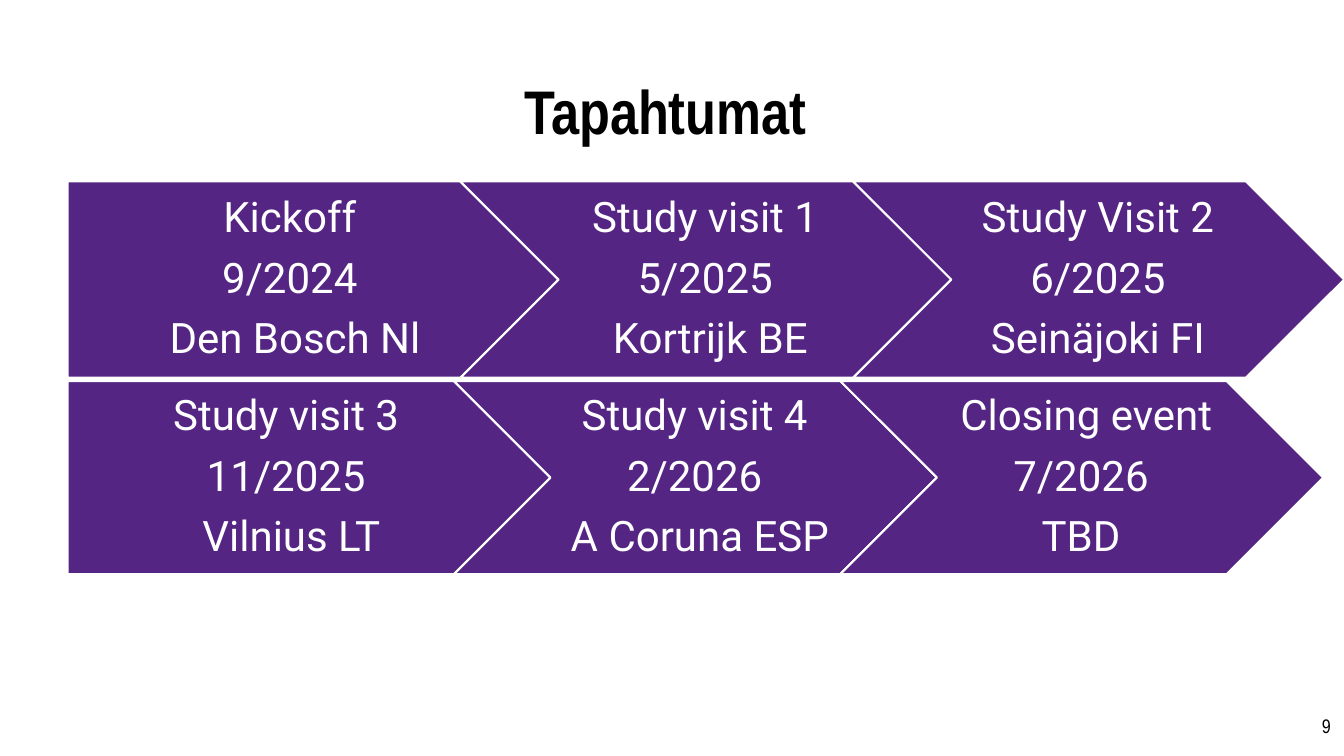
import pptx
import pptx.util
import pptx.dml.color
import pptx.enum.shapes
import pptx.enum.text

Inches, Pt = pptx.util.Inches, pptx.util.Pt
SHAPE = pptx.enum.shapes.MSO_SHAPE
ALIGN = pptx.enum.text.PP_ALIGN
MIDDLE = pptx.enum.text.MSO_ANCHOR.MIDDLE

COLORS = {
    name: pptx.dml.color.RGBColor.from_string(value)
    for name, value in {"arrow": "542583", "light": "FFFFFF", "dark": "000000"}.items()
}

LEFT = 0.67
STEP = 0.8     # share of an arrow's width from one arrow to the next
HEIGHT = 0.4   # arrow height as a share of its width

# top, arrow width, events
EVENT_ROWS = [
    (1.8, 4.87, [
        ("Kickoff ", "9/2024 ", "Den Bosch Nl"),
        ("Study visit 1 ", "5/2025 ", "Kortrijk BE"),
        ("Study Visit 2 ", "6/2025 ", "Seinäjoki FI "),
    ]),
    (3.78, 4.79, [
        ("Study visit 3 ", "11/2025 ", "Vilnius LT"),
        ("Study visit 4 ", "2/2026 ", "A Coruna ESP"),
        ("Closing event", "7/2026 ", "TBD "),
    ]),
]


def format_paragraph(paragraph, font, size, color, align, bold=False):
    paragraph.alignment = align
    for key, value in {"name": font, "size": Pt(size), "bold": bold}.items():
        setattr(paragraph.font, key, value)
    paragraph.font.color.rgb = COLORS[color]


def set_frame(frame, left, top, right, bottom):
    """Wrap and centre the text vertically, with margins in inches."""
    for key, value in {
        "word_wrap": True, "vertical_anchor": MIDDLE,
        "margin_left": Inches(left), "margin_top": Inches(top),
        "margin_right": Inches(right), "margin_bottom": Inches(bottom),
    }.items():
        setattr(frame, key, value)


prs = pptx.Presentation()
prs.slide_width, prs.slide_height = Inches(13.33), Inches(7.5)
slide = prs.slides.add_slide(prs.slide_layouts[5])

title = slide.shapes.title
title.left, title.top, title.width, title.height = map(Inches, (0.92, 0.52, 11.5, 1.24))
title.text_frame.text = "Tapahtumat "
set_frame(title.text_frame, 0.1, 0.05, 0.1, 0.05)
heading = title.text_frame.paragraphs[0]
heading.line_spacing = 0.9
format_paragraph(heading, "Arial Narrow", 44, "dark", ALIGN.CENTER, bold=True)

for top, width, events in EVENT_ROWS:
    for column, event in enumerate(events):
        arrow = slide.shapes.add_shape(
            SHAPE.CHEVRON if column else SHAPE.PENTAGON,
            Inches(LEFT + column * STEP * width), Inches(top),
            Inches(width), Inches(HEIGHT * width))
        arrow.shadow.inherit = False
        arrow.fill.solid()
        arrow.fill.fore_color.rgb = COLORS["arrow"]
        arrow.line.color.rgb = COLORS["light"]
        arrow.line.width = Pt(1.5)
        set_frame(arrow.text_frame, 0.13 if column else 0.17, 0.09, 0.04, 0.09)
        arrow.text_frame.text = "\n".join(event)
        for detail in arrow.text_frame.paragraphs:
            detail.line_spacing = 0.9
            detail.space_after = Pt(11)
            format_paragraph(detail, "Roboto", 30, "light", ALIGN.CENTER)

page_number = slide.shapes.add_textbox(*map(Inches, (10.2, 7, 3, 0.4)))
page_number.text_frame.text = "9"
set_frame(page_number.text_frame, 0, 0, 0, 0)
format_paragraph(page_number.text_frame.paragraphs[0], "Arial Narrow", 14, "dark", ALIGN.RIGHT)

prs.save("out.pptx")
